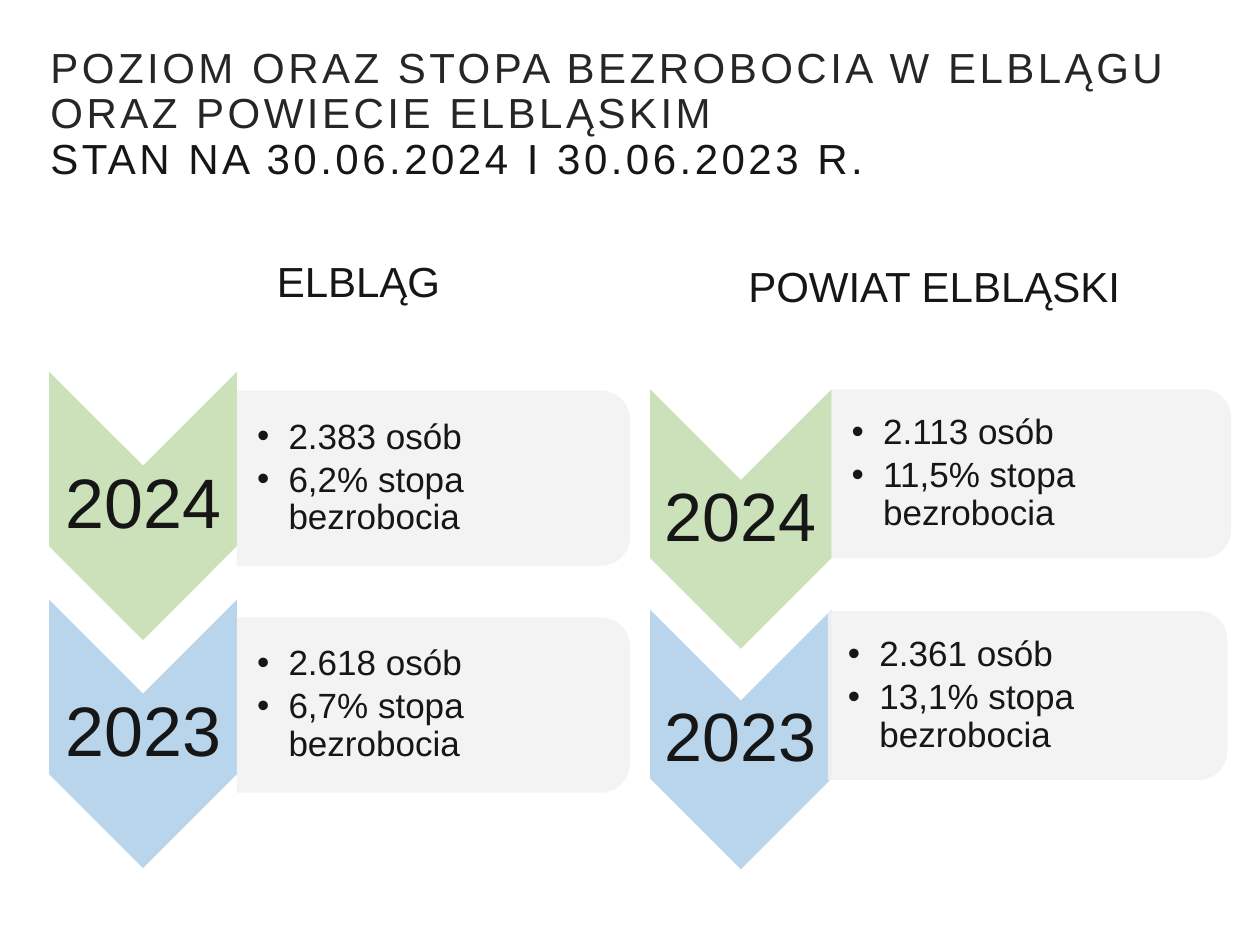
from dataclasses import dataclass

from lxml.etree import SubElement
from pptx import Presentation
from pptx.dml.color import RGBColor
from pptx.enum.shapes import MSO_SHAPE
from pptx.enum.text import MSO_ANCHOR, MSO_AUTO_SIZE, PP_ALIGN
from pptx.oxml.ns import qn
from pptx.util import Inches, Pt

FONT = "Arial"
INK = RGBColor(0x17, 0x16, 0x16)
TITLE_INK = RGBColor(0x26, 0x26, 0x26)
GREEN = RGBColor(0xCA, 0xE1, 0xB9)
BLUE = RGBColor(0xB9, 0xD5, 0xEC)
GREY = RGBColor(0xF2, 0xF2, 0xF2)


@dataclass
class Box:
    x: float
    y: float
    w: float
    h: float

    def inches(self) -> list:
        return [Inches(v) for v in (self.x, self.y, self.w, self.h)]


@dataclass
class YearRow:
    year: str
    color: RGBColor
    chevron: Box
    panel: Box
    year_size: int
    facts: tuple


@dataclass
class Region:
    name: str
    heading: Box
    rows: tuple


REGIONS = (
    Region("ELBLĄG", Box(1.05, 1.89, 3.59, 0.72), (
        YearRow("2024", GREEN, Box(0.39, 2.95, 1.49, 2.13), Box(1.88, 3.1, 3.12, 1.39), 40,
                ("2.383 osób", "6,2% stopa bezrobocia")),
        YearRow("2023", BLUE, Box(0.39, 4.76, 1.49, 2.13), Box(1.88, 4.9, 3.12, 1.39), 40,
                ("2.618 osób", "6,7% stopa bezrobocia")),
    )),
    Region("POWIAT ELBLĄSKI", Box(5.54, 1.93, 3.75, 0.72), (
        YearRow("2024", GREEN, Box(5.16, 3.09, 1.44, 2.06), Box(6.6, 3.09, 3.17, 1.34), 39,
                ("2.113 osób", "11,5% stopa bezrobocia")),
        YearRow("2023", BLUE, Box(5.16, 4.84, 1.44, 2.06), Box(6.57, 4.85, 3.17, 1.34), 39,
                ("2.361 osób", "13,1% stopa bezrobocia")),
    )),
)


def add_run(p, text: str, size: float, color: RGBColor = INK):
    r = p.add_run()
    r.text = text
    r.font.name, r.font.size, r.font.bold = FONT, Pt(size), False
    r.font.color.rgb = color
    return r


def set_frame(tf, left=0.1, top=0.05, right=0.1, bottom=0.05) -> None:
    tf.word_wrap = True
    tf.auto_size = MSO_AUTO_SIZE.NONE
    tf.vertical_anchor = MSO_ANCHOR.MIDDLE
    tf.margin_left, tf.margin_top = Inches(left), Inches(top)
    tf.margin_right, tf.margin_bottom = Inches(right), Inches(bottom)


def place(sp, box: Box) -> None:
    sp.left, sp.top, sp.width, sp.height = box.inches()


def add_label(s, text: str, box: Box, size: float, margin: float) -> None:
    tf = s.shapes.add_textbox(*box.inches()).text_frame
    set_frame(tf, margin, margin, margin, margin)
    p = tf.paragraphs[0]
    p.alignment = PP_ALIGN.CENTER
    p.line_spacing = 0.9
    add_run(p, text, size)


def add_turned(s, kind: MSO_SHAPE, box: Box, color: RGBColor):
    """Draw a preset turned by 90 degrees so that it covers the given box."""
    turned = Box(box.x + (box.w - box.h) / 2, box.y + (box.h - box.w) / 2, box.h, box.w)
    sp = s.shapes.add_shape(kind, *turned.inches())
    sp.rotation = 90
    sp.shadow.inherit = False
    sp.fill.solid()
    sp.fill.fore_color.rgb = color
    sp.line.fill.background()
    return sp


def fill_list(s, sp, facts: tuple, panel: Box) -> None:
    place(sp, Box(panel.x, panel.y + 0.07, panel.w - 0.07, panel.h - 0.14))
    s.shapes._spTree.append(sp._element)  # bring in front of its panel
    tf = sp.text_frame
    set_frame(tf, 0.16, 0.01, 0.01, 0.01)
    for i, fact in enumerate(facts):
        p = tf.add_paragraph() if i else tf.paragraphs[0]
        p.line_spacing, p.space_before, p.space_after = 0.9, Pt(0), Pt(3)
        pPr = p._p.get_or_add_pPr()
        pPr.set("marL", str(Inches(0.25)))
        pPr.set("indent", str(-Inches(0.25)))
        SubElement(pPr, qn("a:buFont")).set("typeface", FONT)
        SubElement(pPr, qn("a:buChar")).set("char", "•")
        add_run(p, fact, 20)


def add_row(s, row: YearRow, sp) -> None:
    add_turned(s, MSO_SHAPE.CHEVRON, row.chevron, row.color)
    c = row.chevron
    add_label(s, row.year, Box(c.x, c.y + c.h * 0.35, c.w, c.h * 0.3), row.year_size, 0.03)
    panel = add_turned(s, MSO_SHAPE.ROUND_2_SAME_RECTANGLE, row.panel, GREY)
    color = panel._element.spPr.find(qn("a:solidFill"))[0]
    SubElement(color, qn("a:alpha")).set("val", "90000")
    fill_list(s, sp, row.facts, row.panel)


def fill_title(sp) -> None:
    place(sp, Box(0, 0.28, 9.96, 1.27))
    tf = sp.text_frame
    set_frame(tf)
    lines = (("POZIOM ORAZ STOPA BEZROBOCIA W ELBLĄGU ORAZ POWIECIE ELBLĄSKIM", TITLE_INK),
             ("STAN NA 30.06.2024 I 30.06.2023 R.", INK))
    for i, (text, color) in enumerate(lines):
        p = tf.add_paragraph() if i else tf.paragraphs[0]
        p.alignment = PP_ALIGN.LEFT
        p.line_spacing = 0.9
        p._p.get_or_add_pPr().set("marL", str(Inches(0.3)))
        r = add_run(p, text, 24, color)
        r.font._element.set("spc", "200")


def main() -> None:
    prs = Presentation()
    prs.slide_width, prs.slide_height = Inches(10), Inches(7.5)
    s = prs.slides.add_slide(prs.slide_layouts[4])  # title and four text areas
    fill_title(s.shapes.title)

    # One body placeholder for each year of each region
    bodies = iter([sp for sp in s.placeholders if sp.placeholder_format.idx in range(1, 5)])
    for region in REGIONS:
        for row in region.rows:
            add_row(s, row, next(bodies))
        add_label(s, region.name, region.heading, 24, 0.1)

    prs.save("out.pptx")


if __name__ == "__main__":
    main()
